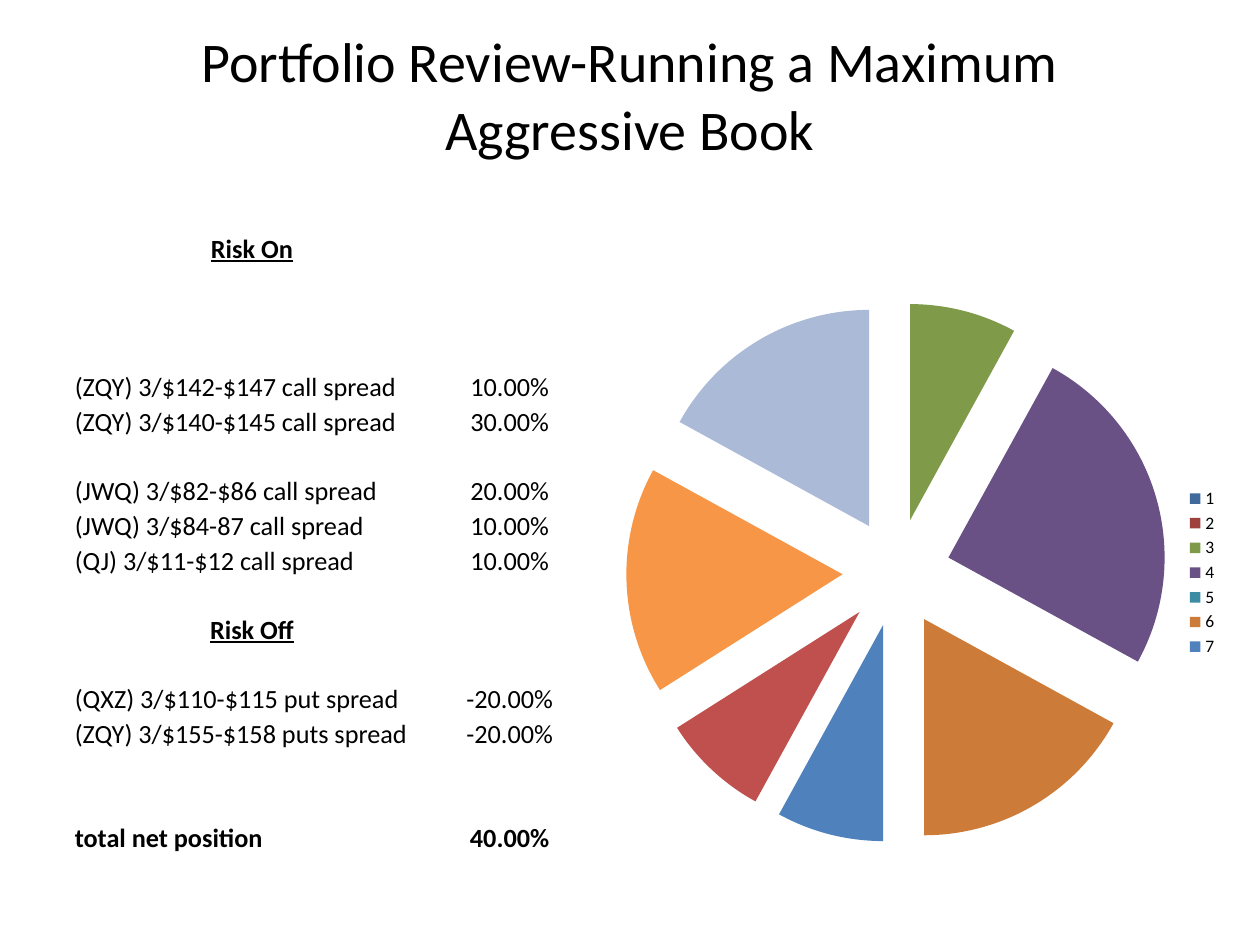
from lxml import etree
from pptx import Presentation
from pptx import util as u
from pptx.chart import data
from pptx.dml.color import RGBColor
from pptx.enum import chart as ch, text
from pptx.oxml import ns

Pt = u.Pt
FONT = "Calibri"
BLACK = RGBColor(0x00, 0x00, 0x00)
BLUE = RGBColor(0x4F, 0x81, 0xBD)
RED = RGBColor(0xC0, 0x50, 0x4D)
ORANGE = RGBColor(0xF7, 0x96, 0x46)
PALE_BLUE = RGBColor(0xAA, 0xBA, 0xD7)
DARK_BLUE = RGBColor(0x40, 0x69, 0x9C)
DARK_RED = RGBColor(0x9E, 0x41, 0x3E)
GREEN = RGBColor(0x7F, 0x9A, 0x48)
PURPLE = RGBColor(0x69, 0x51, 0x85)
TEAL = RGBColor(0x3C, 0x8D, 0xA3)
DARK_ORANGE = RGBColor(0xCC, 0x7B, 0x38)

SLICE_COLORS = [DARK_BLUE, DARK_RED, GREEN, PURPLE, TEAL, DARK_ORANGE, BLUE,
                RED, GREEN, PURPLE, TEAL, ORANGE, PALE_BLUE, PALE_BLUE]
WEIGHTS = [None, None, 8, 25, None, 17, 8, 8, None, None, None, -17, -17, None]
LEGEND_COUNT = 7
EXPLOSION = 25

ROW_COUNT = 18
HEADINGS = {0: "Risk On", 11: "Risk Off"}
POSITIONS = {
    4: ("(ZQY) 3/$142-$147 call spread", "10.00%"),
    5: ("(ZQY) 3/$140-$145 call spread", "30.00%"),
    7: ("(JWQ) 3/$82-$86 call spread", "20.00%"),
    8: ("(JWQ) 3/$84-87 call spread", "10.00%"),
    9: ("(QJ) 3/$11-$12 call spread", "10.00%"),
    13: ("(QXZ) 3/$110-$115 put spread", "-20.00%"),
    14: ("(ZQY) 3/$155-$158 puts spread", "-20.00%"),
    17: ("total net position", "40.00%"),
}
TOTAL_ROW = 17


def add_run(p, words, size, bold=False, underline=False):
    r = p.add_run()
    r.text = words
    f = r.font
    f.name, f.size, f.bold, f.underline = FONT, Pt(size), bold, underline
    f.color.rgb = BLACK


def add_title(s, x, y, w, h):
    sp = s.shapes.title
    sp.left, sp.top, sp.width, sp.height = Pt(x), Pt(y), Pt(w), Pt(h)
    tf = sp.text_frame
    tf.word_wrap = True
    tf.auto_size = text.MSO_AUTO_SIZE.NONE
    tf.vertical_anchor = text.MSO_ANCHOR.MIDDLE
    tf.margin_bottom = Pt(52)
    p = tf.paragraphs[0]
    p.alignment = text.PP_ALIGN.CENTER
    add_run(p, "Portfolio Review-Running a Maximum", 32)
    p.add_line_break()
    add_run(p, "Aggressive Book", 32)


def add_pie(s, x, y, w, h):
    cd = data.CategoryChartData()
    cd.categories = [str(n + 1) for n in range(len(WEIGHTS))]
    cd.add_series("Series 1", WEIGHTS)
    chart = s.shapes.add_chart(ch.XL_CHART_TYPE.PIE, Pt(x), Pt(y), Pt(w), Pt(h), cd).chart
    chart.has_title = False
    chart.font.name, chart.font.size = FONT, Pt(10)
    chart.font.color.rgb = BLACK
    plot = chart.plots[0]
    plot.vary_by_categories = True
    series = plot.series[0]
    for i, color in enumerate(SLICE_COLORS):
        fmt = series.points[i].format
        fmt.fill.solid()
        fmt.fill.fore_color.rgb = color
        fmt.line.fill.background()
    explosion = etree.Element(ns.qn("c:explosion"), val=str(EXPLOSION))
    series._element.find(ns.qn("c:dPt")).addprevious(explosion)

    chart.has_legend = True
    legend = chart.legend
    legend.position = ch.XL_LEGEND_POSITION.RIGHT
    legend.include_in_layout = False
    anchor = legend._element.find(ns.qn("c:legendPos"))
    for i in reversed(range(LEGEND_COUNT, len(WEIGHTS))):
        entry = etree.Element(ns.qn("c:legendEntry"))
        etree.SubElement(entry, ns.qn("c:idx"), val=str(i))
        etree.SubElement(entry, ns.qn("c:delete"), val="1")
        anchor.addnext(entry)


def fill_cell(cell, words, centred, bold, underline):
    cell.fill.background()
    cell.vertical_anchor = text.MSO_ANCHOR.BOTTOM
    cell.margin_left = cell.margin_right = cell.margin_top = Pt(0.72)
    cell.margin_bottom = Pt(0)
    p = cell.text_frame.paragraphs[0]
    p.alignment = text.PP_ALIGN.CENTER if centred else text.PP_ALIGN.LEFT
    if words:
        add_run(p, words, 15, bold, underline)
    else:
        etree.SubElement(p._p, ns.qn("a:endParaRPr"), sz="1500")


def add_positions(s, x, y, w, h):
    tbl = s.shapes.add_table(ROW_COUNT, 2, Pt(x), Pt(y), Pt(w), Pt(h)).table
    tbl.first_row = tbl.horz_banding = False
    name_w = 204
    tbl.columns[0].width, tbl.columns[1].width = Pt(name_w), Pt(w - name_w)
    for i, row in enumerate(tbl.rows):
        row.height = Pt(h / ROW_COUNT)
        heading = i in HEADINGS
        name, share = (HEADINGS[i], "") if heading else POSITIONS.get(i, ("", ""))
        bold = heading or i == TOTAL_ROW
        fill_cell(row.cells[0], name, heading, bold, heading)
        fill_cell(row.cells[1], share, True, bold, False)


def main():
    prs = Presentation()
    prs.slide_width, prs.slide_height = Pt(720), Pt(540)
    s = prs.slides.add_slide(prs.slide_layouts[5])
    add_title(s, 36, 18, 648, 120)
    add_pie(s, 348, 126, 355, 402.5)
    add_positions(s, 42, 132, 294.5, 356.4)
    prs.save("out.pptx")


if __name__ == "__main__":
    main()
